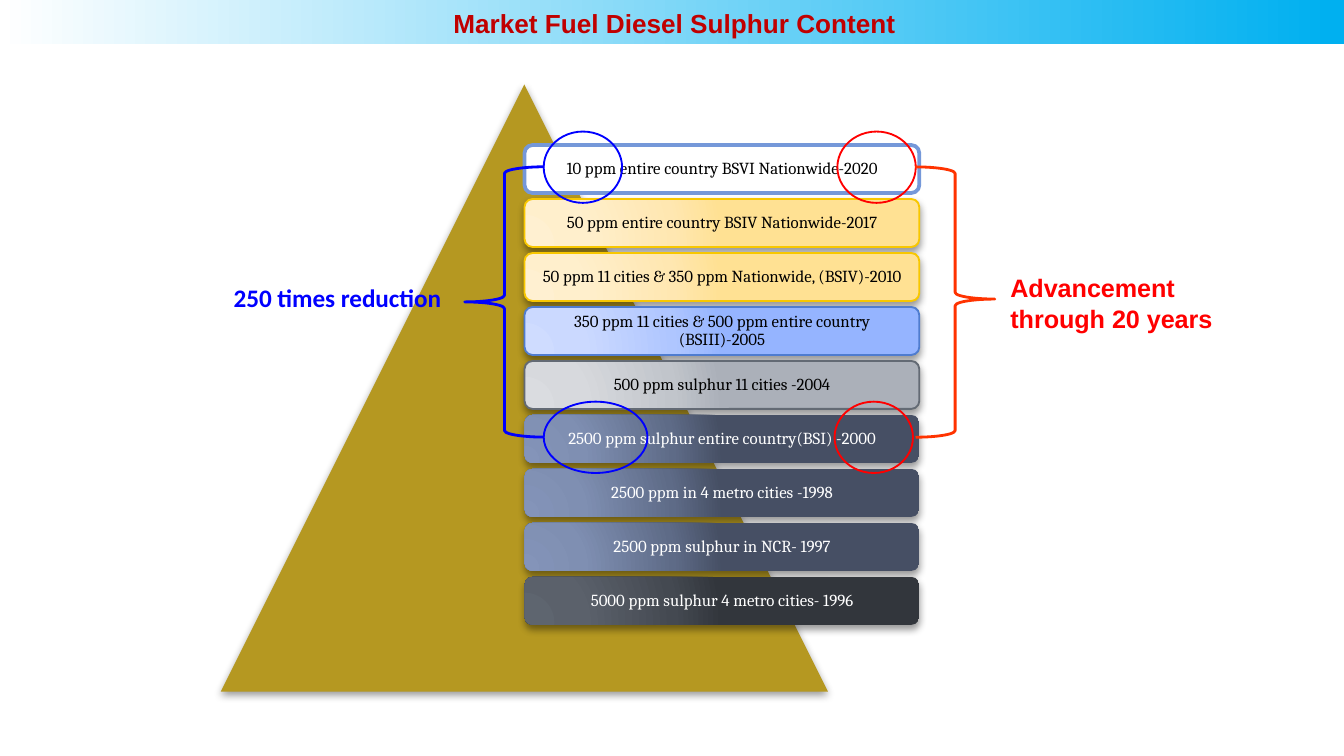
import pptx
import pptx.util
import pptx.dml.color
import pptx.enum.shapes
import pptx.enum.text
import pptx.oxml
import pptx.oxml.ns

Pt = pptx.util.Pt
SHAPE = pptx.enum.shapes.MSO_SHAPE
ALIGN = pptx.enum.text.PP_ALIGN
ANCHOR = pptx.enum.text.MSO_ANCHOR

BLUE, RED, ORANGE = "0000FF", "FF0000", "FF3300"
RADIAL = ('<a:path path="circle"><a:fillToRect l="5000" t="100000" '
          'r="120000" b="10000"/></a:path>')
LINEAR = '<a:lin ang="0" scaled="0"/>'

AMBER = ("FFF0D1", "FFEFCC", "FFE7B1", "FFE193")
SKY = ("CFDCFF", "CBD9FF", "AFC6FF", "95B4FF")
SILVER = ("DADCE0", "D7D9DD", "C1C5CB", "ABB0B9")
SLATE = ("8494B9", "7F8FB2", "5E6B87", "464F64")
CHARCOAL = ("5E656F", "5B616B", "444951", "32363C")

STAGES = [
    ("10 ppm entire country BSVI Nationwide-2020", None, "7598D9", "000000"),
    ("50 ppm entire country BSIV Nationwide-2017", AMBER, "F8C700", "000000"),
    ("50 ppm 11 cities & 350 ppm Nationwide, (BSIV)-2010", AMBER, "F8C700", "000000"),
    ("350 ppm 11 cities & 500 ppm entire country (BSIII)-2005", SKY, "4F7CCF", "000000"),
    ("500 ppm sulphur 11 cities -2004", SILVER, "636A74", "000000"),
    ("2500 ppm sulphur entire country(BSI) -2000", SLATE, None, "FFFFFF"),
    ("2500 ppm in 4 metro cities -1998", SLATE, None, "FFFFFF"),
    ("2500 ppm sulphur in NCR- 1997", SLATE, None, "FFFFFF"),
    ("5000 ppm sulphur 4 metro cities- 1996", CHARCOAL, None, "FFFFFF"),
]


def rgb(code):
    return pptx.dml.color.RGBColor.from_string(code)


def add_xml(xml):
    return pptx.oxml.parse_xml(xml.replace(">", f" {pptx.oxml.ns.nsdecls('a')}>", 1))


def add_outline(slide, kind, box, fill=None, line=None, width=1):
    shape = slide.shapes.add_shape(kind, *map(Pt, box))
    shape.shadow.inherit = False
    if fill:
        shape.fill.solid()
        shape.fill.fore_color.rgb = rgb(fill)
    else:
        shape.fill.background()
    if line:
        shape.line.color.rgb = rgb(line)
        shape.line.width = Pt(width)
    else:
        shape.line.fill.background()
    return shape


def set_gradient(shape, stops, direction):
    listed = "".join(
        f'<a:gs pos="{place * 1000}"><a:srgbClr val="{code}"/></a:gs>'
        for place, code in stops)
    gradient = add_xml(f"<a:gradFill><a:gsLst>{listed}</a:gsLst>{direction}</a:gradFill>")
    properties = shape.element.spPr
    properties.replace(properties.find(pptx.oxml.ns.qn("a:noFill")), gradient)


def set_shadow(shape):
    effects = shape.element.spPr.find(pptx.oxml.ns.qn("a:effectLst"))
    effects.append(add_xml(
        f'<a:outerShdw blurRad="{Pt(4)}" dist="{Pt(2)}" dir="5400000" rotWithShape="0">'
        '<a:srgbClr val="000000"><a:alpha val="40000"/></a:srgbClr></a:outerShdw>'))


def write(frame, text, font, size, color, bold=False, align=ALIGN.LEFT, spacing=1.0):
    frame.word_wrap = True
    frame.text = text
    for paragraph in frame.paragraphs:
        paragraph.alignment = align
        paragraph.line_spacing = spacing
        for run in paragraph.runs:
            run.font.name = font
            run.font.size = Pt(size)
            run.font.bold = bold
            run.font.color.rgb = rgb(color)


def add_header(slide):
    title = slide.shapes.title
    title.left, title.top, title.width, title.height = map(Pt, (117.4, 2.2, 488, 31))
    write(title.text_frame, "Market Fuel Diesel Sulphur Content", "Arial", 14,
          "C00000", True, ALIGN.CENTER, 0.9)
    title.text_frame.vertical_anchor = ANCHOR.TOP
    title.text_frame.auto_size = pptx.enum.text.MSO_AUTO_SIZE.NONE
    band = add_outline(slide, SHAPE.RECTANGLE, (0, 0, 720, 23.6))
    set_gradient(band, [(0, "FFFFFF"), (99, "00B0F0")], LINEAR)
    title.element.addprevious(band.element)


def add_stage(slide, index, text, colors, border, ink):
    bar = add_outline(slide, SHAPE.ROUNDED_RECTANGLE,
                      (281, 77.7 + 28.92 * index, 211.5, 25.7),
                      None if colors else "FFFFFF", border, 1 if colors else 2)
    if colors:
        set_gradient(bar, zip((0, 30, 75, 100), colors), RADIAL)
        set_shadow(bar)
    frame = bar.text_frame
    frame.margin_left = frame.margin_right = Pt(4.2)
    frame.margin_top = frame.margin_bottom = Pt(2.7)
    frame.vertical_anchor = ANCHOR.MIDDLE
    write(frame, text, "Cambria", 9, ink, False, ALIGN.CENTER, 0.9)


def add_label(slide, box, text, font, color):
    label = slide.shapes.add_textbox(*map(Pt, box))
    write(label.text_frame, text, font, 13.5, color, True)


def add_brace(slide, left, color):
    return add_outline(slide, SHAPE.LEFT_BRACE, (left, 89.4, 42.5, 144.8), None, color, 1.5)


def main():
    deck = pptx.Presentation()
    deck.slide_width, deck.slide_height = Pt(720), Pt(405)
    slide = deck.slides.add_slide(deck.slide_layouts[5])
    add_header(slide)

    pyramid = add_outline(slide, SHAPE.ISOSCELES_TRIANGLE, (118.3, 45.3, 325.3, 325.3), "B59821")
    set_shadow(pyramid)
    for index, stage in enumerate(STAGES):
        add_stage(slide, index, *stage)

    for left, top, width, color in (
            (291.3, 70.5, 42, BLUE), (291.3, 215.2, 55.6, BLUE),
            (448.6, 70.5, 42, RED), (447.1, 215.2, 42, RED)):
        add_outline(slide, SHAPE.OVAL, (left, top, width, 38.2), None, color)

    add_brace(slide, 249, BLUE)
    years_brace = add_brace(slide, 490.4, ORANGE)
    years_brace.rotation = 180
    years_brace.adjustments[1] = 0.511

    add_label(slide, (118.1, 147.8, 187, 23.6), "250 times reduction", "Calibri", BLUE)
    add_label(slide, (534.2, 142.6, 187, 40), "Advancement\nthrough 20 years", "Arial", RED)
    deck.save("out.pptx")


if __name__ == "__main__":
    main()
